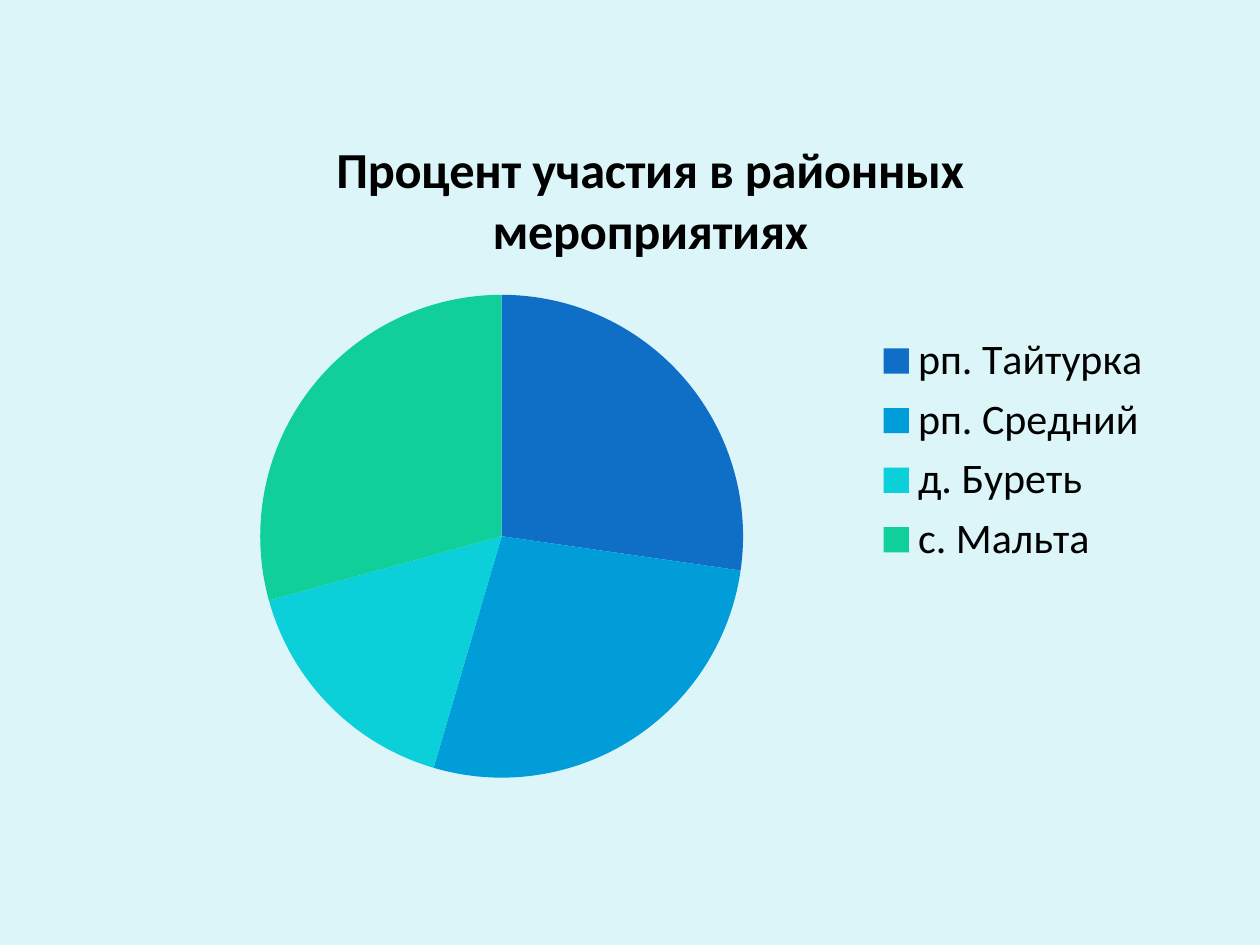
import dataclasses

import pptx
import pptx.chart.data
import pptx.dml.color
import pptx.enum.chart
import pptx.util

Inches = pptx.util.Inches
Pt = pptx.util.Pt


@dataclasses.dataclass(frozen=True)
class Theme:
    back: str = "DBF5F9"
    ink: str = "000000"
    font: str = "Calibri"
    head: float = 28.8
    body: float = 24
    slices: tuple = ("0F6FC6", "009DD9", "0BD0D9", "10CF9B")


THEME = Theme()
TITLE = "Процент участия в районных мероприятиях"
SHARES = {
    "рп. Тайтурка": 27,
    "рп. Средний": 27,
    "д. Буреть": 16,
    "с. Мальта": 29,
}


def paint(fill, color):
    fill.solid()
    fill.fore_color.rgb = pptx.dml.color.RGBColor.from_string(color)


def style(font, size, bold=False):
    font.name = THEME.font
    font.size = Pt(size)
    font.bold = bold
    font.color.rgb = pptx.dml.color.RGBColor.from_string(THEME.ink)


def add_pie(slide, left, top, width, height):
    data = pptx.chart.data.CategoryChartData()
    data.categories = list(SHARES)
    data.add_series(TITLE, list(SHARES.values()))
    chart = slide.shapes.add_chart(
        pptx.enum.chart.XL_CHART_TYPE.PIE,
        Inches(left), Inches(top), Inches(width), Inches(height), data,
    ).chart
    style(chart.font, THEME.body)

    # Heading
    chart.has_title = True
    run = chart.chart_title.text_frame.paragraphs[0].add_run()
    run.text = TITLE
    style(run.font, THEME.head, bold=True)
    chart.chart_title.include_in_layout = False

    # Legend
    chart.has_legend = True
    chart.legend.position = pptx.enum.chart.XL_LEGEND_POSITION.RIGHT
    chart.legend.include_in_layout = False
    style(chart.legend.font, THEME.body)

    # Slices
    plot = chart.plots[0]
    plot.vary_by_categories = True
    for i, color in enumerate(THEME.slices):
        paint(plot.series[0].points[i].format.fill, color)


def main():
    deck = pptx.Presentation()
    deck.slide_width, deck.slide_height = Inches(10), Inches(7.5)
    slide = deck.slides.add_slide(deck.slide_layouts[6])
    paint(slide.background.fill, THEME.back)
    add_pie(slide, 1.06, 0.84, 8.2, 5.47)
    deck.save("out.pptx")


if __name__ == "__main__":
    main()
